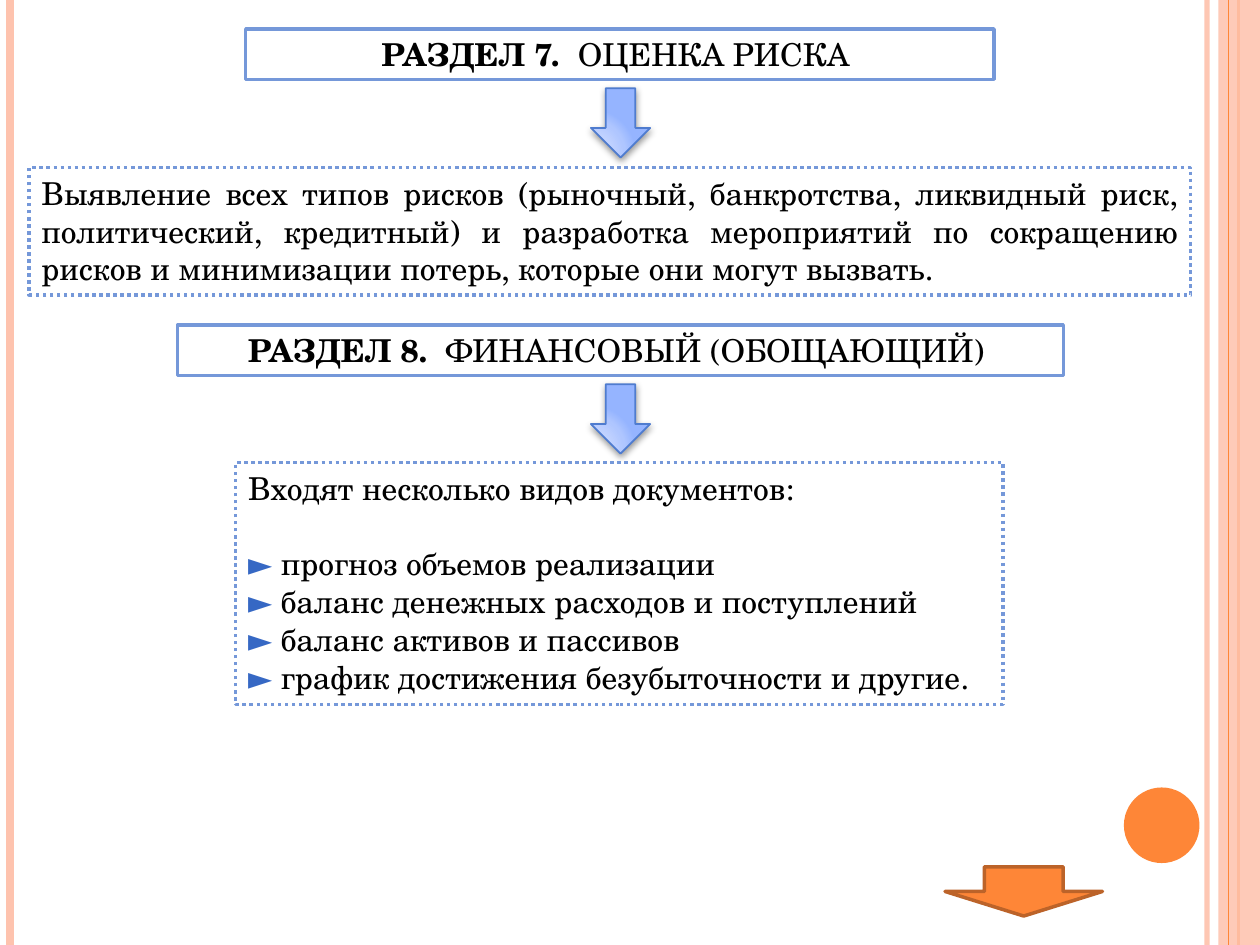
from dataclasses import dataclass

from lxml import etree
from pptx import Presentation, util as u
from pptx.dml.color import RGBColor
from pptx.enum import dml, shapes, text
from pptx.oxml import parse_xml
from pptx.oxml.ns import nsdecls, qn

BODY_FONT = "TeX Gyre Schola"
MARKER_FONT = "Quicksand"
ORANGE = "FE8637"
PINK = "FEC3AE"
BORDER = "7598D9"
MARKER = "► "
LINE_PITCH = 21.6
ARROW_STOPS = ((0, "CFDCFF"), (30, "CBD9FF"), (75, "AFC6FF"), (100, "95B4FF"))


@dataclass(frozen=True)
class Box:
    left: float
    top: float
    width: float
    height: float


@dataclass(frozen=True)
class Stripe:
    x: float
    color: str
    weight: float
    opacity: int = 100


@dataclass(frozen=True)
class Section:
    number: str
    title: str
    heading: Box
    details: Box
    intro: str
    align: text.PP_ALIGN
    items: tuple[str, ...] = ()


LEFT_STRIPES = (Stripe(9.58, PINK, 3, 93), Stripe(0.08, PINK, 4.5), Stripe(9.83, ORANGE, 1.5))
BAND_STRIPE = Stripe(9.75, ORANGE, 0.75)

SECTIONS = (
    Section(
        "РАЗДЕЛ 7.  ", "ОЦЕНКА РИСКА ",
        Box(1.95, 0.23, 5.94, 0.4), Box(0.23, 1.33, 9.22, 1.01),
        "Выявление всех типов рисков (рыночный, банкротства, ликвидный риск, "
        "политический, кредитный) и разработка мероприятий по сокращению рисков "
        "и минимизации потерь, которые они могут вызвать.",
        text.PP_ALIGN.JUSTIFY,
    ),
    Section(
        "РАЗДЕЛ 8.  ", "ФИНАНСОВЫЙ (ОБОЩАЮЩИЙ) ",
        Box(1.41, 2.58, 7.03, 0.4), Box(1.87, 3.67, 6.09, 1.92),
        "Входят несколько видов документов:",
        text.PP_ALIGN.LEFT,
        (
            "прогноз объемов реализации",
            "баланс денежных расходов и поступлений",
            "баланс активов и пассивов",
            "график достижения безубыточности и другие.",
        ),
    ),
)


def rgb(code: str) -> RGBColor:
    return RGBColor.from_string(code)


def set_opacity(element, percent: int) -> None:
    color = next(element.iter(qn("a:srgbClr")))
    etree.SubElement(color, qn("a:alpha")).set("val", str(percent * 1000))


def add_stripe(slide, stripe: Stripe) -> None:
    x = u.Inches(stripe.x)
    line = slide.shapes.add_connector(
        shapes.MSO_CONNECTOR.STRAIGHT, x, 0, x, u.Inches(7.5))
    line.line.color.rgb = rgb(stripe.color)
    line.line.width = u.Pt(stripe.weight)
    properties = line._element.spPr
    if stripe.opacity < 100:
        set_opacity(properties, stripe.opacity)
    etree.SubElement(properties, qn("a:effectLst"))


def add_figure(slide, kind: shapes.MSO_SHAPE, box: Box, fill: str,
               border: str | None = None, weight: float = 2):
    figure = slide.shapes.add_shape(
        kind, u.Inches(box.left), u.Inches(box.top),
        u.Inches(box.width), u.Inches(box.height))
    figure.shadow.inherit = False
    figure.fill.solid()
    figure.fill.fore_color.rgb = rgb(fill)
    if border:
        figure.line.color.rgb = rgb(border)
        figure.line.width = u.Pt(weight)
    else:
        figure.line.fill.background()
    return figure


def add_text(paragraph, wording: str, bold: bool = False,
             font: str = BODY_FONT, color: str = "000000") -> None:
    run = paragraph.add_run()
    run.text = wording
    run.font.size = u.Pt(18)
    run.font.name = font
    run.font.bold = bold
    run.font.color.rgb = rgb(color)


def add_panel(slide, box: Box):
    panel = add_figure(slide, shapes.MSO_SHAPE.RECTANGLE, box, "FFFFFF", BORDER)
    frame = panel.text_frame
    frame.word_wrap = True
    frame.vertical_anchor = text.MSO_ANCHOR.TOP
    frame.auto_size = text.MSO_AUTO_SIZE.SHAPE_TO_FIT_TEXT
    return panel


def add_glossy_arrow(slide, top: float) -> None:
    arrow = add_figure(slide, shapes.MSO_SHAPE.DOWN_ARROW,
                       Box(4.69, top, 0.47, 0.55), ARROW_STOPS[0][1], "4F7CCF", 1)
    properties = arrow._element.spPr
    stops = "".join(
        f'<a:gs pos="{place * 1000}"><a:srgbClr val="{color}"/></a:gs>'
        for place, color in ARROW_STOPS)
    gradient = parse_xml(
        f'<a:gradFill {nsdecls("a")}><a:gsLst>{stops}</a:gsLst><a:path path="circle">'
        '<a:fillToRect l="5000" t="100000" r="120000" b="10000"/></a:path></a:gradFill>')
    properties.replace(properties.find(qn("a:solidFill")), gradient)
    shadow = parse_xml(
        f'<a:outerShdw {nsdecls("a")} blurRad="{u.Pt(4)}" dist="{u.Pt(2)}" dir="5400000" '
        'rotWithShape="0"><a:srgbClr val="000000"><a:alpha val="40000"/></a:srgbClr>'
        '</a:outerShdw>')
    properties.find(qn("a:effectLst")).append(shadow)


def add_section(slide, section: Section) -> None:
    heading = add_panel(slide, section.heading).text_frame.paragraphs[0]
    heading.alignment = text.PP_ALIGN.CENTER
    add_text(heading, section.number, bold=True)
    add_text(heading, section.title)

    add_glossy_arrow(slide, section.heading.top + 0.47)

    details = add_panel(slide, section.details)
    details.line.dash_style = dml.MSO_LINE.ROUND_DOT
    intro = details.text_frame.paragraphs[0]
    intro.alignment = section.align
    add_text(intro, section.intro)
    for position, item in enumerate(section.items):
        entry = details.text_frame.add_paragraph()
        entry.alignment = section.align
        if position == 0:
            entry.space_before = u.Pt(LINE_PITCH)
        add_text(entry, MARKER, font=MARKER_FONT, color="3668C4")
        add_text(entry, item)


def main() -> None:
    deck = Presentation()
    deck.slide_width, deck.slide_height = u.Inches(10), u.Inches(7.5)
    slide = deck.slides.add_slide(deck.slide_layouts[6])

    for stripe in LEFT_STRIPES:
        add_stripe(slide, stripe)
    band = add_figure(slide, shapes.MSO_SHAPE.RECTANGLE, Box(9.67, 0, 0.33, 7.5), PINK)
    set_opacity(band._element.spPr, 87)
    add_stripe(slide, BAND_STRIPE)
    add_figure(slide, shapes.MSO_SHAPE.OVAL, Box(8.92, 6.25, 0.6, 0.6), ORANGE)

    for section in SECTIONS:
        add_section(slide, section)
    add_figure(slide, shapes.MSO_SHAPE.DOWN_ARROW, Box(7.5, 6.88, 1.25, 0.39),
               ORANGE, "BC6329")

    deck.save("out.pptx")


if __name__ == "__main__":
    main()
